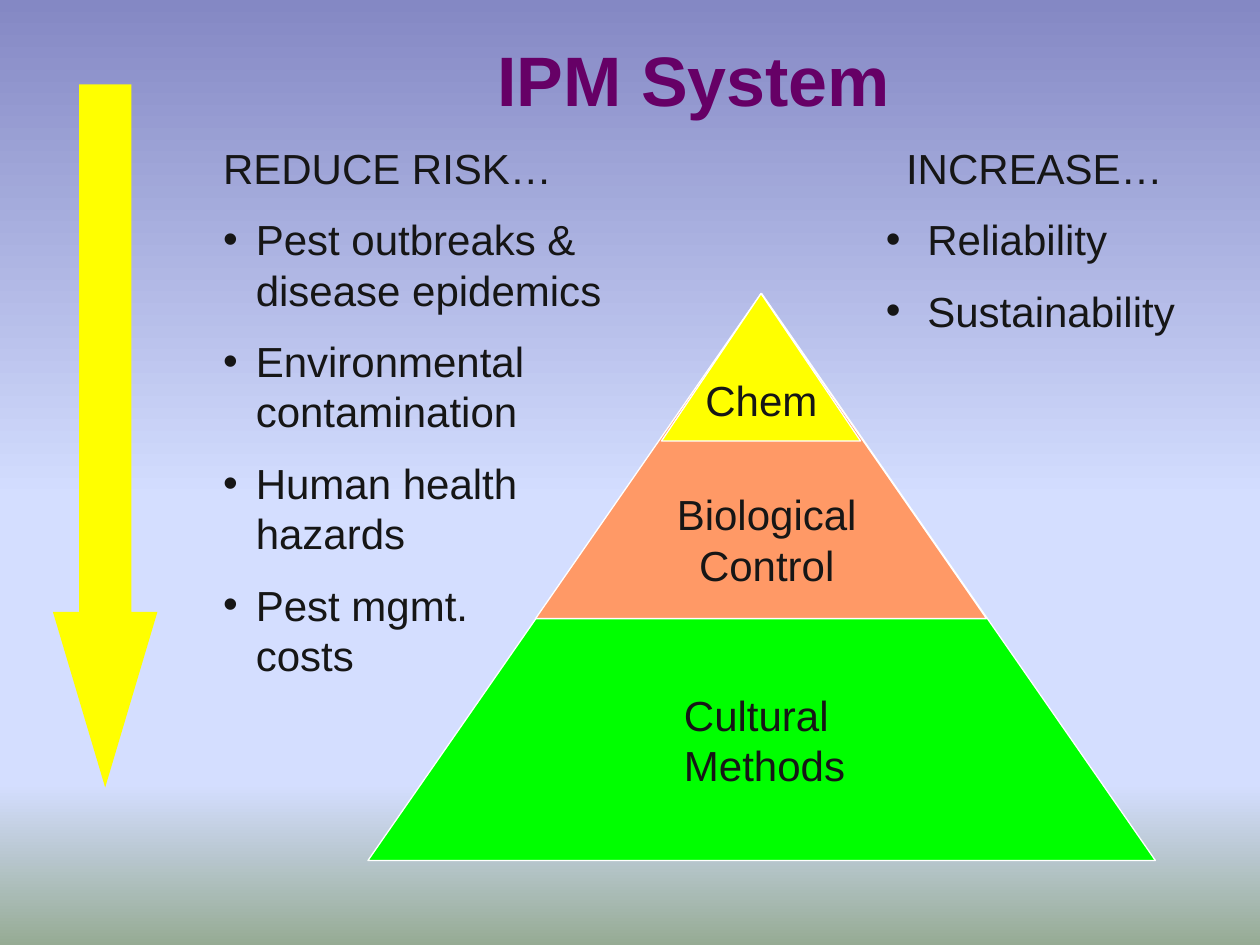
import copy
import pptx
import pptx.dml.color
import pptx.enum.shapes
import pptx.enum.text
import pptx.oxml.ns
import pptx.util

Inches, Pt = pptx.util.Inches, pptx.util.Pt
Kind = pptx.enum.shapes.MSO_SHAPE
Align = pptx.enum.text.PP_ALIGN
INK = "161616"


def paint(color, code):
    color.rgb = pptx.dml.color.RGBColor.from_string(code)


def write(box, area, lines, align=Align.LEFT, size=24, ink=INK, bold=False):
    box.left, box.top, box.width, box.height = [Inches(n) for n in area]
    frame = box.text_frame
    frame.text = "\n".join(lines)
    frame.word_wrap = True
    frame.auto_size = pptx.enum.text.MSO_AUTO_SIZE.NONE
    for par in frame.paragraphs:
        par.alignment = align
        par.space_before = Pt(size / 2)
        par.font.name = "Arial"
        par.font.size = Pt(size)
        par.font.bold = bold
        paint(par.font.color, ink)


deck = pptx.Presentation()
deck.slide_width, deck.slide_height = Inches(10), Inches(7.5)
slide = deck.slides.add_slide(deck.slide_layouts[3])
title, risks, gains = slide.placeholders

back = slide.background.fill
back.gradient()
back.gradient_angle = 270
stops = slide.element.find(".//" + pptx.oxml.ns.qn("a:gsLst"))
for stop in list(stops):
    stops.append(copy.deepcopy(stop))
sky = [(0, "8488C4"), (0.53, "D4DEFF"), (0.83, "D4DEFF"), (1, "96AB94")]
for stop, (place, code) in zip(back.gradient_stops, sky):
    stop.position = place
    paint(stop.color, code)

write(title, (2.92, 0, 5.17, 1.25), ["IPM System"], Align.CENTER, 40, "660066", True)
title.text_frame.vertical_anchor = pptx.enum.text.MSO_ANCHOR.MIDDLE
title.text_frame.paragraphs[0].space_before = Pt(0)

write(risks, (1.67, 1.08, 3.67, 4.54), [
    "REDUCE RISK…",
    "Pest outbreaks &\vdisease epidemics",
    "Environmental contamination",
    "Human health hazards",
    "Pest mgmt.\vcosts",
])
write(gains, (6.67, 1.08, 3.08, 1.72), ["INCREASE…", "Reliability", "Sustainability"])
gains.text_frame.paragraphs[0].alignment = Align.CENTER

for box, left, hang in [(risks, 0.26, 0.26), (gains, 0.59, 0.33)]:
    for row, par in enumerate(box.text_frame.paragraphs):
        props = par._p.get_or_add_pPr()
        props.set("marL", str(Inches(left if row else 0)))
        props.set("indent", str(Inches(-hang if row else 0)))
        mark = pptx.oxml.ns.qn("a:buChar" if row else "a:buNone")
        bullet = props.makeelement(mark, {"char": "•"} if row else {})
        props.find(pptx.oxml.ns.qn("a:defRPr")).addprevious(bullet)

shapes = [
    (Kind.DOWN_ARROW, (0.42, 0.67, 0.83, 5.58), "FFFF00"),
    (Kind.ISOSCELES_TRIANGLE, (2.92, 2.33, 6.25, 4.5), "00FF00"),
    (Kind.ISOSCELES_TRIANGLE, (4.25, 2.33, 3.58, 2.58), "FF9966"),
    (Kind.ISOSCELES_TRIANGLE, (5.25, 2.33, 1.58, 1.17), "FFFF00"),
]
for kind, area, code in shapes:
    shape = slide.shapes.add_shape(kind, *[Inches(n) for n in area])
    shape.shadow.inherit = False
    shape.fill.solid()
    paint(shape.fill.fore_color, code)
    if kind == Kind.DOWN_ARROW:
        shape.adjustments[0] = 0.5
        shape.adjustments[1] = 1.68
        shape.line.fill.background()
    else:
        paint(shape.line.color, "FFFFFF")
        shape.line.width = Pt(0.75)

labels = [
    ("Cultural Methods", (5.33, 5.42, 1.5, 0.91), Align.LEFT),
    ("Biological Control", (5, 3.83, 2.17, 0.91), Align.CENTER),
    ("Chem", (5.5, 2.92, 1.17, 0.5), Align.LEFT),
]
for text, area, align in labels:
    box = slide.shapes.add_textbox(0, 0, 0, 0)
    write(box, area, [text], align)

deck.save("out.pptx")
